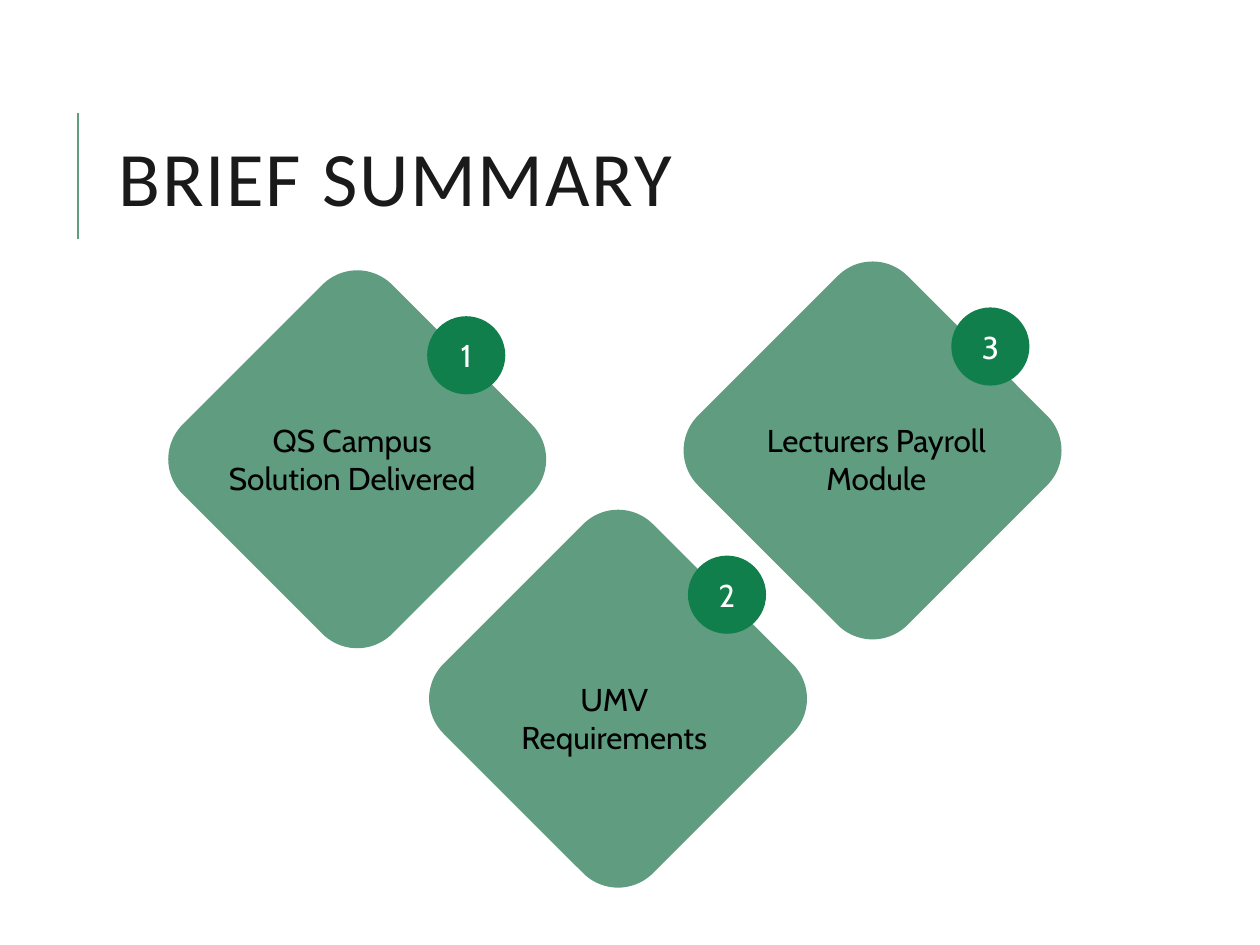
from collections import namedtuple
from dataclasses import dataclass

from pptx import Presentation
from pptx.dml.color import RGBColor
from pptx.enum.shapes import MSO_CONNECTOR, MSO_SHAPE
from pptx.enum.text import MSO_ANCHOR, PP_ALIGN
from pptx.util import Inches, Pt
from lxml import etree

ROUNDED, OVAL = MSO_SHAPE.ROUNDED_RECTANGLE, MSO_SHAPE.OVAL
STRAIGHT = MSO_CONNECTOR.STRAIGHT
LEFT, CENTER = PP_ALIGN.LEFT, PP_ALIGN.CENTER
TOP, MIDDLE = MSO_ANCHOR.TOP, MSO_ANCHOR.MIDDLE
TITLE_ONLY = 5
A_NS = "http://schemas.openxmlformats.org/drawingml/2006/main"

Box = namedtuple("Box", "x y w h")


@dataclass(frozen=True)
class Theme:
    tile: RGBColor = RGBColor(0x5F, 0x9C, 0x80)
    badge: RGBColor = RGBColor(0x10, 0x7F, 0x4C)
    title: RGBColor = RGBColor(0x1A, 0x1A, 0x1A)
    label: RGBColor = RGBColor(0, 0, 0)
    number: RGBColor = RGBColor(255, 255, 255)
    heading_font: str = "Calibri"
    body_font: str = "Cabin"
    heading_size: int = 44
    body_size: int = 18


THEME = Theme()
SLIDE = Box(0, 0, 10, 7.5)
TILE = 2.35
BADGE = 0.62
LABEL_W = 2.25

# number, text, tile corner, badge offset, label offset, label height
CARDS = [
    (1, "QS Campus Solution Delivered", (1.66, 2.47), 1.73, (0.01, 0.82), 0.71),
    (2, "UMV Requirements", (3.73, 4.37), 1.73, (0.02, 0.98), 0.71),
    (3, "Lecturers Payroll Module", (5.75, 2.4), 1.8, (0.08, 0.89), 0.71),
]


def emu(box):
    return [Inches(v) for v in box]


def write(tf, text, color, font, size, align=CENTER, anchor=MIDDLE):
    tf.word_wrap = True
    tf.vertical_anchor = anchor
    p = tf.paragraphs[0]
    p.alignment = align
    r = p.add_run()
    r.text = text
    r.font.name, r.font.size = font, Pt(size)
    r.font.color.rgb = color
    return p, r


def add_solid(slide, kind, box, color):
    sp = slide.shapes.add_shape(kind, *emu(box))
    sp.shadow.inherit = False
    sp.fill.solid()
    sp.fill.fore_color.rgb = color
    sp.line.fill.background()
    return sp


def add_heading(slide, box, text):
    """Title with an accent rule to its left."""
    rule_x, rule_y = box.x - 0.22, box.y + 0.26
    line = slide.shapes.add_connector(
        STRAIGHT, *emu((rule_x, rule_y + 1, rule_x, rule_y)))
    line.line.color.rgb = THEME.tile
    line.line.width = Pt(1.5)
    etree.SubElement(line._element.spPr, f"{{{A_NS}}}effectLst")

    title = slide.shapes.title
    title.left, title.top, title.width, title.height = emu(box)
    p, r = write(title.text_frame, text, THEME.title, THEME.heading_font,
                 THEME.heading_size, LEFT)
    p.line_spacing = 0.8
    r.font._element.set("spc", "100")


def add_card(slide, box, number, text, badge_dx, label_offset, label_h):
    """Diamond tile with a numbered badge and a label."""
    add_solid(slide, ROUNDED, box, THEME.tile).rotation = 45

    badge = add_solid(slide, OVAL, Box(box.x + badge_dx, box.y + 0.04,
                                       BADGE, BADGE), THEME.badge)
    write(badge.text_frame, str(number), THEME.number, THEME.body_font,
          THEME.body_size)

    dx, dy = label_offset
    label = slide.shapes.add_textbox(
        *emu((box.x + dx, box.y + dy, LABEL_W, label_h)))
    tf = label.text_frame
    tf.margin_left = tf.margin_right = Inches(0.12)
    write(tf, text, THEME.label, THEME.body_font, THEME.body_size, anchor=TOP)


def main():
    prs = Presentation()
    prs.slide_width, prs.slide_height = Inches(SLIDE.w), Inches(SLIDE.h)
    slide = prs.slides.add_slide(prs.slide_layouts[TITLE_ONLY])
    add_heading(slide, Box(0.84, 0.64, 7.97, 1.64), "BRIEF SUMMARY")
    for number, text, corner, badge_dx, label_offset, label_h in CARDS:
        add_card(slide, Box(*corner, TILE, TILE), number, text, badge_dx,
                 label_offset, label_h)
    prs.save("out.pptx")


if __name__ == "__main__":
    main()
